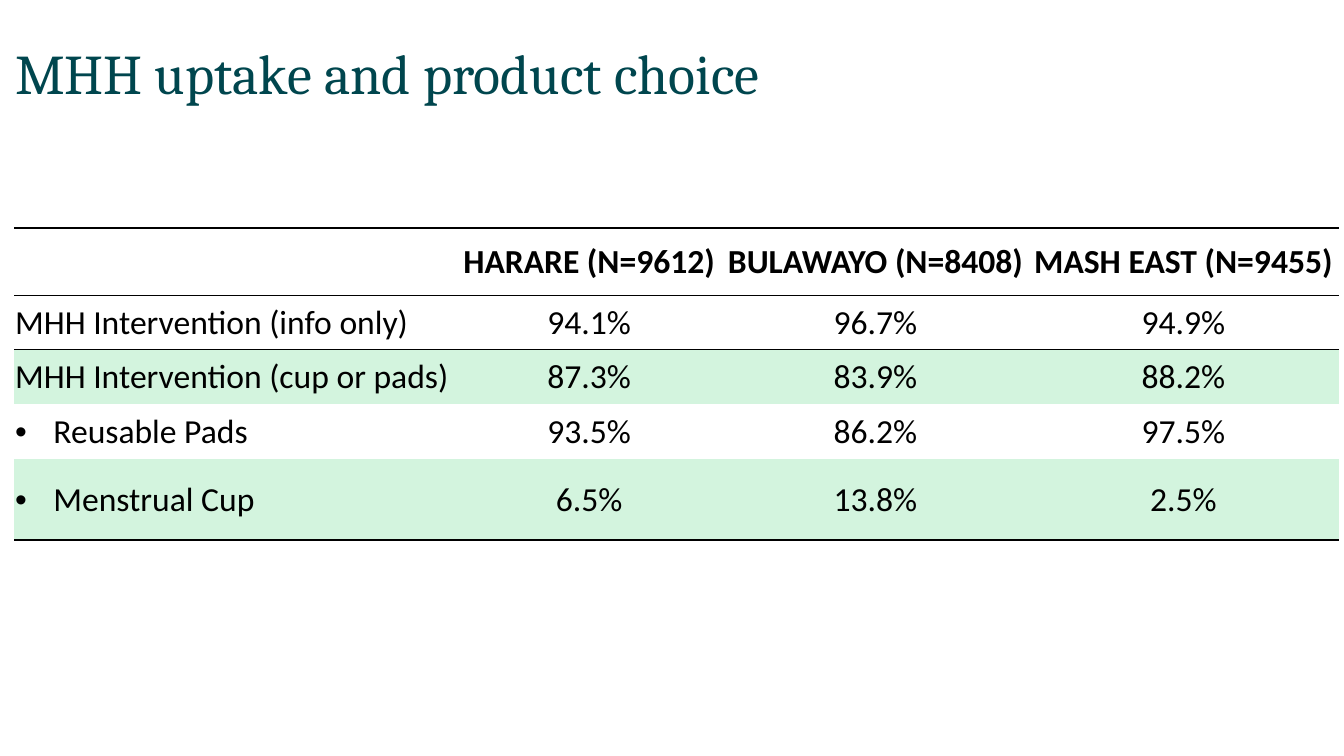
from dataclasses import dataclass

from lxml.etree import SubElement
from pptx import Presentation
from pptx.dml.color import RGBColor
from pptx.enum.text import MSO_ANCHOR, PP_ALIGN
from pptx.oxml.ns import qn
from pptx.slide import Slide
from pptx.table import Table, _Cell
from pptx.text.text import Font, _Paragraph
from pptx.util import Inches, Length, Pt

COLOURS = {"title": "00464E", "text": "000000", "rule": "000000",
           "header": "FFFFFF", "band": "D3F4DE"}
SLIDE_WIDTH, SLIDE_HEIGHT = Inches(13.33), Inches(7.5)
COLUMN_SHARES = (32.85, 19.88, 22.72, 23.1)
PLAIN_TABLE_STYLE = "{2D5ABB26-0587-4C30-8999-92F81FD0307C}"
BULLET_INDENT = Inches(0.38)


@dataclass(frozen=True)
class UptakeRow:
    """A table row: height in percent of the slide, rules in points."""
    texts: tuple[str, str, str, str]
    height: float
    fill: str | None = None
    top_rule: float = 0
    bottom_rule: float = 0
    bold: bool = False
    bulleted: bool = False


ROWS = (
    UptakeRow(("", "HARARE (N=9612)", "BULAWAYO (N=8408)", "MASH EAST (N=9455)"), 8.93,
              fill="header", top_rule=2, bottom_rule=1, bold=True),
    UptakeRow(("MHH Intervention (info only)", "94.1%", "96.7%", "94.9%"), 7.2,
              top_rule=1, bottom_rule=1),
    UptakeRow(("MHH Intervention (cup or pads)", "87.3%", "83.9%", "88.2%"), 7.2,
              fill="band", top_rule=1),
    UptakeRow(("Reusable Pads", "93.5%", "86.2%", "97.5%"), 7.2, bulleted=True),
    UptakeRow(("Menstrual Cup", "6.5%", "13.8%", "2.5%"), 10.8,
              fill="band", bottom_rule=2, bulleted=True),
)


def across(percent: float) -> Length:
    return Length(round(SLIDE_WIDTH * percent / 100))


def down(percent: float) -> Length:
    return Length(round(SLIDE_HEIGHT * percent / 100))


def style_font(font: Font, name: str, size: float, colour: str, bold: bool = False) -> None:
    font.name, font.size, font.bold = name, Pt(size), bold
    font.color.rgb = RGBColor.from_string(COLOURS[colour])


def add_rule(cell: _Cell, side: str, width: float) -> None:
    """Rule one side of a cell; a zero width leaves it bare."""
    line = SubElement(cell._tc.get_or_add_tcPr(), qn(f"a:ln{side}"), w=str(Pt(width)))
    if width:
        fill = SubElement(line, qn("a:solidFill"))
        SubElement(fill, qn("a:srgbClr"), val=COLOURS["rule"])
    else:
        SubElement(line, qn("a:noFill"))


def add_bullet(paragraph: _Paragraph) -> None:
    properties = paragraph._p.get_or_add_pPr()
    properties.set("marL", str(BULLET_INDENT))
    properties.set("indent", str(-BULLET_INDENT))
    SubElement(properties, qn("a:buFont"), typeface="Arial")
    SubElement(properties, qn("a:buChar"), char="•")


def add_title(slide: Slide, text: str) -> None:
    shape = slide.shapes.add_textbox(across(0.38), down(4.93), across(75.68), down(10.27))
    text_frame = shape.text_frame
    text_frame.word_wrap = True
    text_frame.vertical_anchor = MSO_ANCHOR.MIDDLE
    text_frame.text = text
    paragraph = text_frame.paragraphs[0]
    paragraph.line_spacing = 0.9
    style_font(paragraph.runs[0].font, "Cambria", 40, "title")


def fill_cell(cell: _Cell, row: UptakeRow, column: int) -> None:
    # Rules come before the fill in the cell properties
    add_rule(cell, "T", row.top_rule)
    add_rule(cell, "B", row.bottom_rule)
    if row.fill:
        cell.fill.solid()
        cell.fill.fore_color.rgb = RGBColor.from_string(COLOURS[row.fill])
    else:
        cell.fill.background()

    # Text
    cell.margin_left = cell.margin_right = cell.margin_top = Inches(0.01)
    cell.margin_bottom = 0
    cell.vertical_anchor = MSO_ANCHOR.MIDDLE
    cell.text_frame.text = row.texts[column]
    paragraph = cell.text_frame.paragraphs[0]
    paragraph.alignment = PP_ALIGN.CENTER if column else PP_ALIGN.LEFT
    if row.bulleted and column == 0:
        add_bullet(paragraph)
    for run in paragraph.runs:
        style_font(run.font, "Calibri", 24, "text", row.bold)


def add_uptake_table(slide: Slide) -> None:
    frame = slide.shapes.add_table(
        len(ROWS), len(COLUMN_SHARES), across(1.05), down(30.13),
        across(sum(COLUMN_SHARES)), down(sum(row.height for row in ROWS)))
    table: Table = frame.table
    table.first_row = table.horz_banding = False
    table._tbl.tblPr.find(qn("a:tableStyleId")).text = PLAIN_TABLE_STYLE
    for column, share in zip(table.columns, COLUMN_SHARES):
        column.width = across(share)
    for row_index, row in enumerate(ROWS):
        table.rows[row_index].height = down(row.height)
        for column_index in range(len(COLUMN_SHARES)):
            fill_cell(table.cell(row_index, column_index), row, column_index)


def main() -> None:
    presentation = Presentation()
    presentation.slide_width, presentation.slide_height = SLIDE_WIDTH, SLIDE_HEIGHT
    slide = presentation.slides.add_slide(presentation.slide_layouts[6])
    add_title(slide, "MHH uptake and product choice")
    add_uptake_table(slide)
    presentation.save("out.pptx")


if __name__ == "__main__":
    main()
